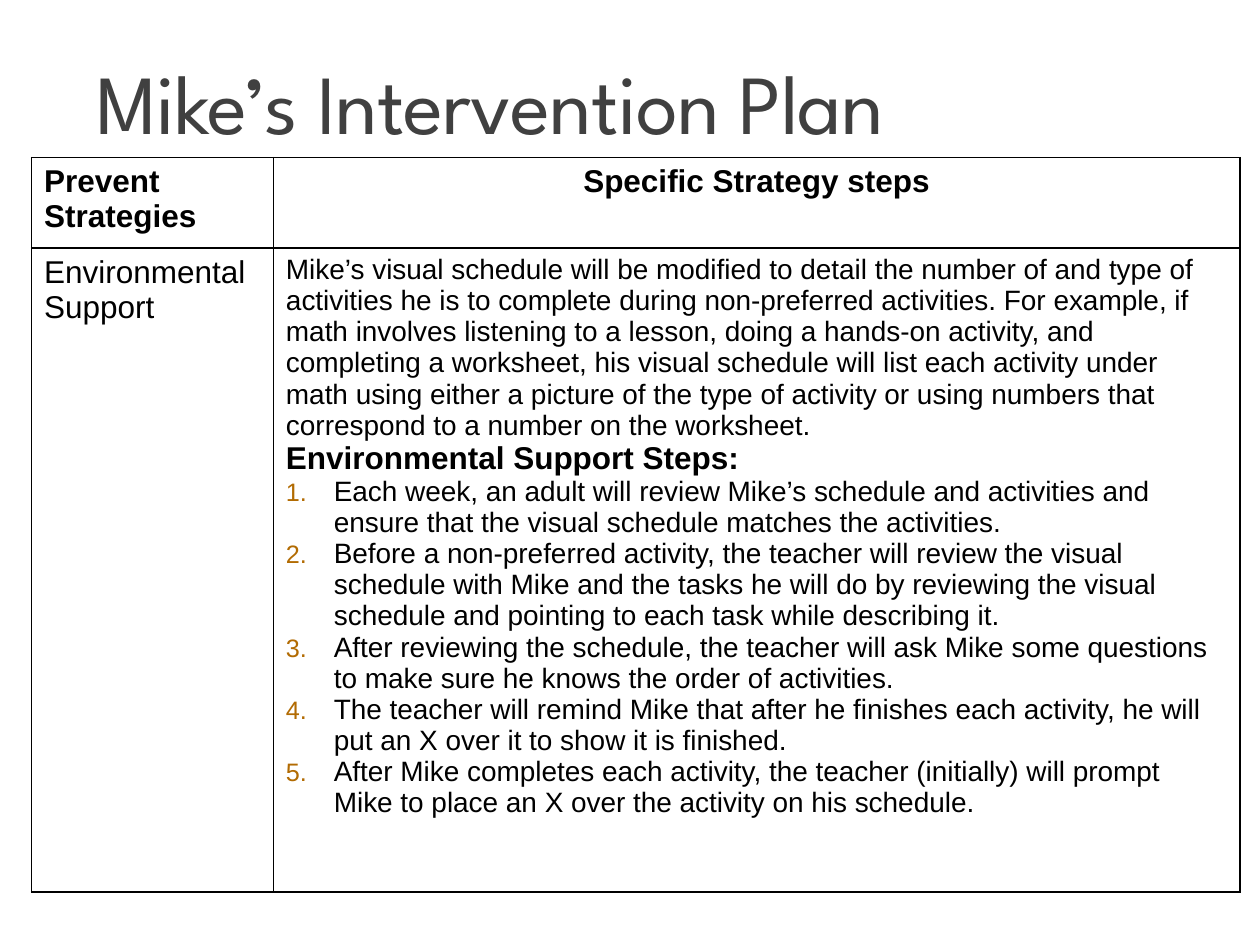
from dataclasses import dataclass

from lxml.etree import SubElement
from pptx import Presentation
from pptx.dml.color import RGBColor as RGB
from pptx.enum.text import MSO_ANCHOR as Anchor, PP_ALIGN as Align
from pptx.oxml.ns import qn
from pptx.util import Inches, Pt


@dataclass(frozen=True)
class Theme:
    heading_font: str = "League Spartan"
    body_font: str = "Arial"
    heading_color: str = "404040"
    ink: str = "000000"
    number_color: str = "B26B02"
    heading_size: int = 48
    label_size: int = 18
    body_size: int = 16
    border_width: int = 1


THEME = Theme()


def write(paragraph, text, *, size=THEME.label_size, font=THEME.body_font,
          color=THEME.ink, bold=False, align=Align.LEFT, line=None,
          tracking=None, numbered=False):
    paragraph.alignment = align
    if line:
        paragraph.line_spacing = line
    if numbered:
        number(paragraph)
    run = paragraph.add_run()
    run.text = text
    run.font.size = Pt(size)
    run.font.name = font
    run.font.bold = bold
    run.font.color.rgb = RGB.from_string(color)
    if tracking:
        run.font._element.set("spc", str(int(tracking * 100)))


def number(paragraph):
    properties = paragraph._p.get_or_add_pPr()
    indent = Inches(0.38)
    properties.set("marL", str(indent))
    properties.set("indent", str(-indent))
    tint = SubElement(properties, qn("a:buClr"))
    SubElement(tint, qn("a:srgbClr"), val=THEME.number_color)
    SubElement(properties, qn("a:buSzPct"), val="90000")
    SubElement(properties, qn("a:buFont"), typeface=THEME.body_font)
    SubElement(properties, qn("a:buAutoNum"), type="arabicPeriod")


class SlideBuilder:
    def __init__(self, slide, theme):
        self.slide = slide
        self.theme = theme

    def title(self, text, left, top, width, height):
        box = self.slide.shapes.add_textbox(
            *map(Inches, (left, top, width, height)))
        frame = box.text_frame
        frame.word_wrap = True
        frame.vertical_anchor = Anchor.BOTTOM
        write(frame.paragraphs[0], text, size=self.theme.heading_size,
              font=self.theme.heading_font, color=self.theme.heading_color,
              line=0.85, tracking=-0.5)

    def table(self, rows, left, top, widths, heights):
        grid = self.slide.shapes.add_table(
            len(rows), len(widths), Inches(left), Inches(top),
            Inches(sum(widths)), Inches(sum(heights))).table
        grid.first_row = grid.horz_banding = False
        for column, width in zip(grid.columns, widths):
            column.width = Inches(width)
        for row, height, contents in zip(grid.rows, heights, rows):
            row.height = Inches(height)
            for cell, paragraphs in zip(row.cells, contents):
                self.cell(cell, paragraphs)

    def cell(self, cell, paragraphs):
        properties = cell._tc.get_or_add_tcPr()
        for side in ("lnL", "lnR", "lnT", "lnB"):
            border = SubElement(properties, qn(f"a:{side}"),
                                w=str(Pt(self.theme.border_width)))
            fill = SubElement(border, qn("a:solidFill"))
            SubElement(fill, qn("a:srgbClr"), val=self.theme.ink)
        cell.fill.background()
        frame = cell.text_frame
        for index, (text, style) in enumerate(paragraphs):
            paragraph = frame.add_paragraph() if index else frame.paragraphs[0]
            write(paragraph, text, **style)


SUMMARY = (
    "Mike’s visual schedule will be modified to detail the number of and type "
    "of activities he is to complete during non-preferred activities. For "
    "example, if math involves listening to a lesson, doing a hands-on "
    "activity, and completing a worksheet, his visual schedule will list each "
    "activity under math using either a picture of the type of activity or "
    "using numbers that correspond to a number on the worksheet."
)
STEPS = [
    "Each week, an adult will review Mike’s schedule and activities and "
    "ensure that the visual schedule matches the activities.",
    "Before a non-preferred activity, the teacher will review the visual "
    "schedule with Mike and the tasks he will do by reviewing the visual "
    "schedule and pointing to each task while describing it.",
    "After reviewing the schedule, the teacher will ask Mike some questions "
    "to make sure he knows the order of activities.",
    "The teacher will remind Mike that after he finishes each activity, he "
    "will put an X over it to show it is finished.",
    "After Mike completes each activity, the teacher (initially) will prompt "
    "Mike to place an X over the activity on his schedule.",
]


def main():
    deck = Presentation()
    deck.slide_width, deck.slide_height = Inches(10), Inches(7.5)
    builder = SlideBuilder(deck.slides.add_slide(deck.slide_layouts[6]), THEME)

    bold = dict(bold=True)
    body = dict(size=THEME.body_size)
    header = [
        [("Prevent Strategies", bold)],
        [("Specific Strategy steps", dict(bold, align=Align.CENTER))],
    ]
    support = [
        [("Environmental Support", {})],
        [(SUMMARY, body), ("Environmental Support Steps:", bold)]
        + [(step, dict(body, numbered=True)) for step in STEPS],
    ]
    builder.table([header, support], 0.25, 1.25,
                  widths=(1.92, 7.67), heights=(0.72, 5.11))
    builder.title("Mike’s Intervention Plan", 0.67, 0.08, 9, 1.17)
    deck.save("out.pptx")


if __name__ == "__main__":
    main()
